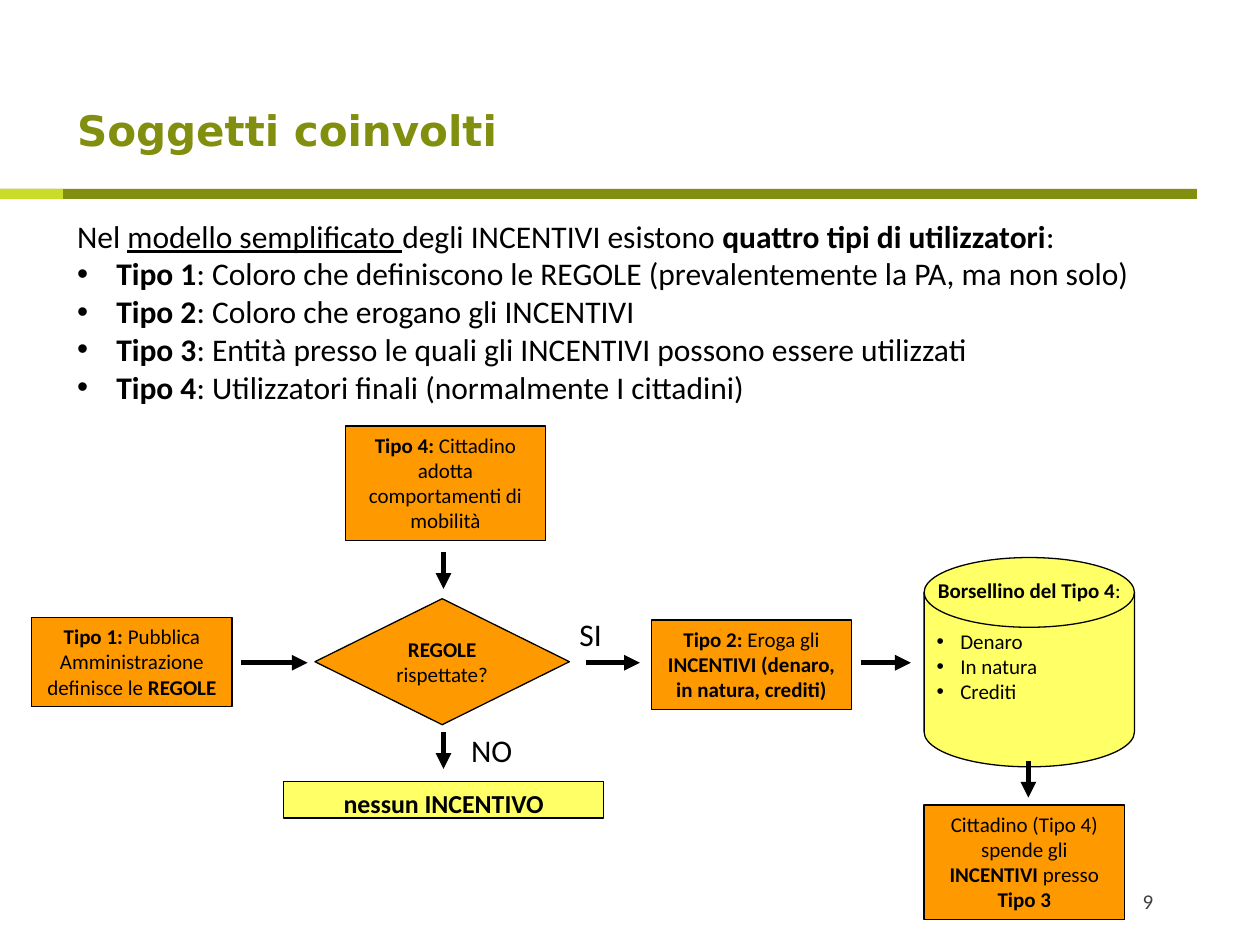
from lxml.etree import SubElement
from pptx import Presentation
from pptx.dml.color import RGBColor
from pptx.enum.shapes import MSO_CONNECTOR, MSO_SHAPE
from pptx.enum.text import MSO_ANCHOR, MSO_AUTO_SIZE, PP_ALIGN
from pptx.oxml.ns import qn
from pptx.util import Cm, Pt

COLOURS = {
    "olive": "828E0E", "lime": "CADB2A", "orange": "FF9900",
    "yellow": "FFFF66", "black": "000000", "grey": "404040",
}
BOLD = {"bold": True}
UNDERLINE = {"underline": True}
PLAIN = {}
TYPES = [
    ("Tipo 1", ": Coloro che definiscono le REGOLE (prevalentemente la PA, ma non solo)"),
    ("Tipo 2", ": Coloro che erogano gli INCENTIVI"),
    ("Tipo 3", ": Entità presso le quali gli INCENTIVI possono essere utilizzati"),
    ("Tipo 4", ": Utilizzatori finali (normalmente I cittadini)"),
]
STEP_WIDTH = 4.04
STEPS = [
    (0.64, 12.45, 1.8, [("Tipo 1: ", BOLD), ("Pubblica Amministrazione definisce le ", PLAIN),
                        ("REGOLE", BOLD)]),
    (6.96, 8.59, 2.31, [("Tipo 4: ", BOLD),
                        ("Cittadino adotta comportamenti di mobilità", PLAIN)]),
    (13.13, 12.5, 1.8, [("Tipo 2: ", BOLD), ("Eroga gli ", PLAIN),
                        ("INCENTIVI (denaro, in natura, crediti)", BOLD)]),
    (18.63, 16.23, 2.31, [("Cittadino (Tipo 4) spende gli ", PLAIN), ("INCENTIVI", BOLD),
                          (" presso ", PLAIN), ("Tipo 3", BOLD)]),
]
FLOW_MIDDLE = 13.36
ACROSS = [(4.85, 6.2), (11.81, 12.9), (17.35, 18.36)]
DOWN_LENGTH = 0.74
DOWN = [(8.94, 11.13), (8.94, 14.76), (20.73, 15.34)]
ANSWERS = [("SI", 11.43, 12.27), ("NO", 9.25, 14.61)]


def colour(name):
    """Return the named colour as an RGB value."""
    return RGBColor.from_string(COLOURS[name])


def set_values(target, values):
    """Set every attribute in a dict of format values."""
    for name, value in values.items():
        setattr(target, name, value)


def set_bullet(paragraph, indent):
    """Give a paragraph a bullet with a hanging indent, or none at zero."""
    properties = paragraph._p.get_or_add_pPr()
    properties.set("marL", str(Cm(indent)))
    properties.set("indent", str(-Cm(indent)))
    if indent:
        SubElement(properties, qn("a:buFont"), typeface="Arial")
        SubElement(properties, qn("a:buChar"), char="•")
    else:
        SubElement(properties, qn("a:buNone"))


def write(paragraph, runs, size, alignment=PP_ALIGN.LEFT, text_colour="black", font="Calibri"):
    """Fill a paragraph with formatted runs."""
    set_values(paragraph, {"alignment": alignment, "space_before": Pt(0)})
    for text, formats in runs:
        run = paragraph.add_run()
        run.text = text
        set_values(run.font, {"name": font, "size": Pt(size), "bold": False, **formats})
        run.font.color.rgb = colour(text_colour)


def place(shape, left, top, width, height):
    """Move and size a shape in centimetres."""
    set_values(shape, {"left": Cm(left), "top": Cm(top),
                       "width": Cm(width), "height": Cm(height)})


def add_bar(slide, width, fill):
    """Add a bar below the title."""
    bar = add_figure(slide, MSO_SHAPE.RECTANGLE, (0, 3.81, width, 0.2), fill)
    bar.line.fill.background()


def add_figure(slide, kind, box, fill):
    """Add a filled and outlined preset shape."""
    shape = slide.shapes.add_shape(kind, *map(Cm, box))
    shape.shadow.inherit = False
    shape.fill.solid()
    shape.fill.fore_color.rgb = colour(fill)
    shape.line.color.rgb = colour("black")
    shape.line.width = Pt(0.75)
    return shape


def add_step(slide, kind, box, fill, runs, size=12):
    """Add a flowchart step with centred text."""
    frame = add_figure(slide, kind, box, fill).text_frame
    set_values(frame, {"word_wrap": True, "vertical_anchor": MSO_ANCHOR.TOP})
    write(frame.paragraphs[0], runs, size, PP_ALIGN.CENTER)


def add_label(slide, box, text, size, **formats):
    """Add a one-line text box."""
    frame = slide.shapes.add_textbox(*map(Cm, box)).text_frame
    set_values(frame, {"word_wrap": True, "vertical_anchor": MSO_ANCHOR.MIDDLE})
    write(frame.paragraphs[0], [(text, PLAIN)], size, **formats)


def add_arrow(slide, *ends):
    """Add a thick arrow from the first point to the second."""
    arrow = slide.shapes.add_connector(MSO_CONNECTOR.STRAIGHT, *map(Cm, ends))
    arrow.line.color.rgb = colour("black")
    arrow.line.width = Pt(3)
    SubElement(arrow.line._get_or_add_ln(), qn("a:tailEnd"), type="triangle")
    SubElement(arrow._element.spPr, qn("a:effectLst"))


def add_wallet(slide):
    """Add the wallet cylinder with its heading and contents."""
    shape = add_figure(slide, MSO_SHAPE.FLOWCHART_MAGNETIC_DISK,
                       (18.63, 11.24, 4.24, 4.22), "yellow")
    frame = shape.text_frame
    set_values(frame, {"word_wrap": False, "vertical_anchor": MSO_ANCHOR.MIDDLE,
                       "margin_bottom": Cm(1.68)})
    heading = frame.paragraphs[0]
    write(heading, [("Borsellino del Tipo 4", BOLD), (":", PLAIN)], 12, PP_ALIGN.CENTER)
    heading.space_after = Pt(14.6)
    for text in ("Denaro", "In natura", "Crediti"):
        paragraph = frame.add_paragraph()
        set_bullet(paragraph, 0.48)
        write(paragraph, [(text, PLAIN)], 12)


def fill_title(title):
    """Write the slide title."""
    place(title, 1.3, 1.47, 16.33, 1.78)
    set_values(title.text_frame, {"vertical_anchor": MSO_ANCHOR.BOTTOM,
                                  "auto_size": MSO_AUTO_SIZE.NONE})
    write(title.text_frame.paragraphs[0], [("Soggetti coinvolti", BOLD)], 24,
          text_colour="olive", font="DejaVu Sans")


def fill_body(body):
    """Write the introduction and the list of user types."""
    place(body, 1.3, 4.24, 22.83, 4.11)
    frame = body.text_frame
    frame.auto_size = MSO_AUTO_SIZE.NONE
    introduction = frame.paragraphs[0]
    set_bullet(introduction, 0)
    write(introduction, [("Nel ", PLAIN), ("modello semplificato ", UNDERLINE),
                         ("degli INCENTIVI esistono ", PLAIN),
                         ("quattro tipi di utilizzatori", BOLD), (":", PLAIN)],
          18, PP_ALIGN.JUSTIFY)
    for name, description in TYPES:
        paragraph = frame.add_paragraph()
        set_bullet(paragraph, 0.79)
        write(paragraph, [(name, BOLD), (description, PLAIN)], 18, PP_ALIGN.JUSTIFY)


def main():
    """Build the slide and save it."""
    presentation = Presentation()
    set_values(presentation, {"slide_width": Cm(25.4), "slide_height": Cm(19.05)})
    slide = presentation.slides.add_slide(presentation.slide_layouts[1])
    add_bar(slide, 24.13, "olive")
    add_bar(slide, 1.27, "lime")
    fill_title(slide.shapes.title)
    fill_body(slide.placeholders[1])
    add_label(slide, (17.58, 17.65, 5.92, 1.02), "9", 12,
              alignment=PP_ALIGN.RIGHT, text_colour="grey")
    add_wallet(slide)
    for left, top, height, runs in STEPS:
        add_step(slide, MSO_SHAPE.RECTANGLE, (left, top, STEP_WIDTH, height), "orange", runs)
    add_step(slide, MSO_SHAPE.DIAMOND, (6.35, 12.07, 5.13, 2.54), "orange",
             [("REGOLE ", BOLD), ("rispettate?", PLAIN)])
    add_step(slide, MSO_SHAPE.RECTANGLE, (5.72, 15.75, 6.45, 0.74), "yellow",
             [("nessun INCENTIVO", BOLD)], 14.8)
    for start, end in ACROSS:
        add_arrow(slide, start, FLOW_MIDDLE, end, FLOW_MIDDLE)
    for left, top in DOWN:
        add_arrow(slide, left, top, left, top + DOWN_LENGTH)
    for text, left, top in ANSWERS:
        add_label(slide, (left, top, 1.47, 1.02), text, 18)
    presentation.save("out.pptx")


if __name__ == "__main__":
    main()
